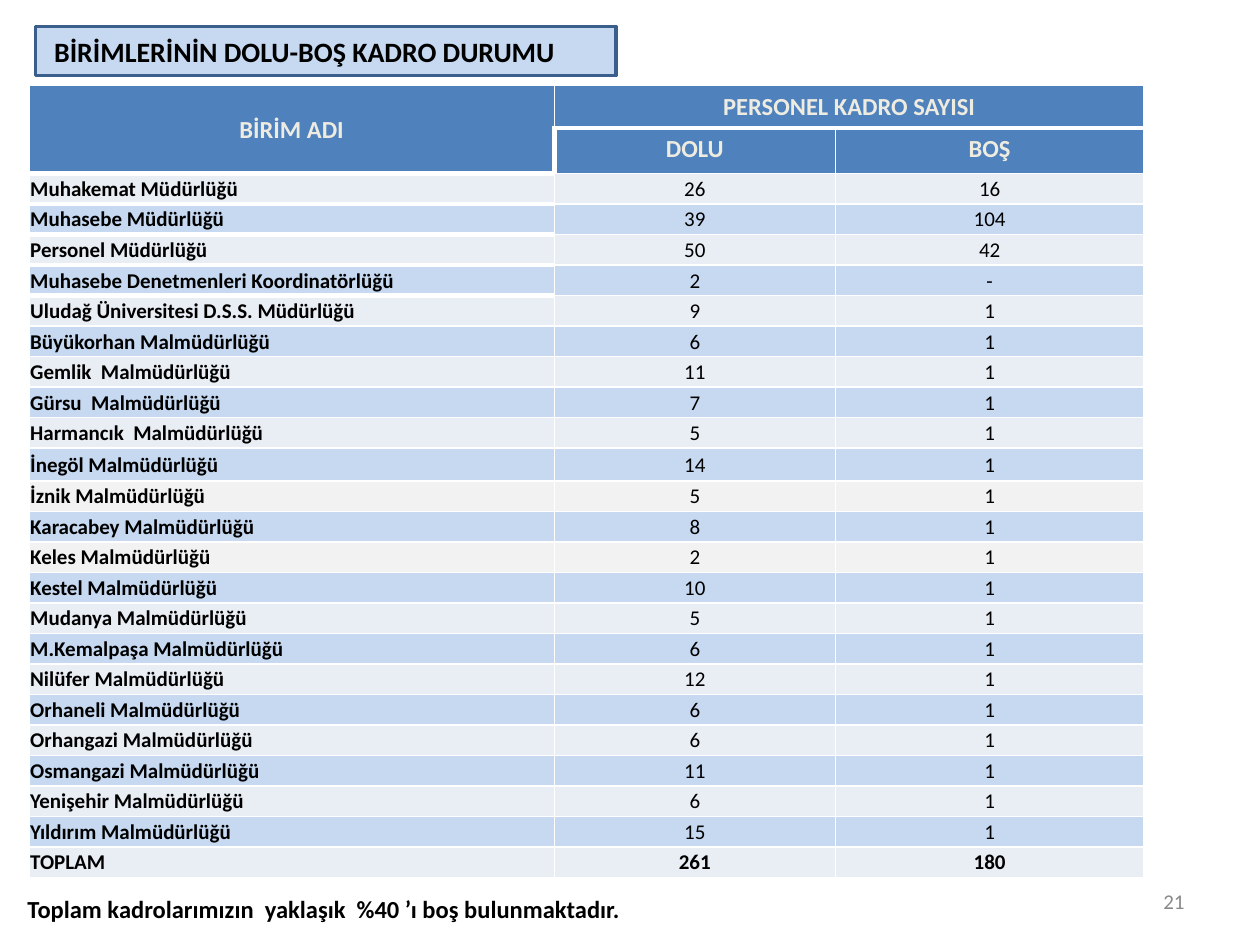
from dataclasses import dataclass

from lxml import etree
from pptx import Presentation, util as u
from pptx.dml.color import RGBColor
from pptx.enum import text
from pptx.oxml import ns

LEFT, CENTER, RIGHT = text.PP_ALIGN.LEFT, text.PP_ALIGN.CENTER, text.PP_ALIGN.RIGHT
TOP, MIDDLE = text.MSO_ANCHOR.TOP, text.MSO_ANCHOR.MIDDLE


@dataclass(frozen=True)
class Theme:
    font: str = "Calibri"
    ink: str = "000000"
    muted: str = "898989"
    white: str = "FFFFFF"
    cream: str = "EEECE1"
    header: str = "4F81BD"
    band: str = "C6D9F1"
    light: str = "E9EDF4"
    grey: str = "F2F2F2"
    outline: str = "3A5F8C"
    title_size: int = 16
    head_size: int = 14
    body_size: int = 12
    thin: int = 1
    thick: int = 3


class StaffPage:
    COLUMNS, ROWS = 100, 75

    def __init__(self, deck, theme):
        self.theme = theme
        self.page = deck.slides.add_slide(deck.slide_layouts[5])
        self.column = deck.slide_width / self.COLUMNS
        self.row = deck.slide_height / self.ROWS

    def area(self, left, top, width, height):
        return [u.Emu(round(count * unit)) for count, unit in
                zip((left, top, width, height), (self.column, self.row) * 2)]

    def add_words(self, para, words, size, color, bold=False, align=LEFT):
        para.alignment = align
        span = para.add_run()
        span.text = words
        span.font.name = self.theme.font
        span.font.size = u.Pt(size)
        span.font.bold = bold
        span.font.color.rgb = RGBColor.from_string(color)

    def title(self, words, *place):
        box = self.page.shapes.title
        box.left, box.top, box.width, box.height = self.area(*place)
        outline = etree.Element(ns.qn("a:prstGeom"), prst="roundRect")
        etree.SubElement(outline, ns.qn("a:avLst"))
        box.element.spPr.insert(1, outline)
        box.fill.solid()
        box.fill.fore_color.rgb = RGBColor.from_string(self.theme.band)
        box.line.color.rgb = RGBColor.from_string(self.theme.outline)
        box.line.width = u.Pt(2)
        frame = box.text_frame
        frame.auto_size = text.MSO_AUTO_SIZE.NONE
        frame.vertical_anchor = MIDDLE
        frame.margin_left = u.Inches(0.15)
        self.add_words(frame.paragraphs[0], words, self.theme.title_size, self.theme.ink, True)

    def note(self, words, *place, anchor=TOP, **style):
        frame = self.page.shapes.add_textbox(*self.area(*place)).text_frame
        frame.word_wrap = True
        frame.vertical_anchor = anchor
        self.add_words(frame.paragraphs[0], words, **style)

    def table(self, place, widths, heights):
        grid = self.page.shapes.add_table(len(heights), len(widths), *self.area(*place)).table
        grid.first_row = grid.horz_banding = False
        for column, width in zip(grid.columns, widths):
            column.width = u.Emu(round(width * self.column))
        for row, height in zip(grid.rows, heights):
            row.height = u.Emu(round(height * self.row))
        return grid

    def cell(self, cell, words, fill, margins, thick="", anchor=MIDDLE, **style):
        cell.fill.solid()
        cell.fill.fore_color.rgb = RGBColor.from_string(fill)
        cell.vertical_anchor = anchor
        cell.margin_left, cell.margin_top, cell.margin_right, cell.margin_bottom = map(u.Inches, margins)
        self.borders(cell, thick)
        if words:
            self.add_words(cell.text_frame.paragraphs[0], words, **style)

    def borders(self, cell, thick):
        properties = cell._tc.get_or_add_tcPr()
        for index, side in enumerate("LRTB"):
            points = self.theme.thick if side in thick else self.theme.thin
            line = etree.Element(ns.qn(f"a:ln{side}"), w=str(u.Pt(points)))
            fill = etree.SubElement(line, ns.qn("a:solidFill"))
            etree.SubElement(fill, ns.qn("a:srgbClr"), val=self.theme.white)
            properties.insert(index, line)


UNITS = [
    ("Muhakemat Müdürlüğü", "26", "16"),
    ("Muhasebe Müdürlüğü", "39", "104"),
    ("Personel Müdürlüğü", "50", "42"),
    ("Muhasebe Denetmenleri Koordinatörlüğü", "2", "-"),
    ("Uludağ Üniversitesi D.S.S. Müdürlüğü", "9", "1"),
    ("Büyükorhan Malmüdürlüğü", "6", "1"),
    ("Gemlik  Malmüdürlüğü", "11", "1"),
    ("Gürsu  Malmüdürlüğü", "7", "1"),
    ("Harmancık  Malmüdürlüğü", "5", "1"),
    ("İnegöl Malmüdürlüğü", "14", "1"),
    ("İznik Malmüdürlüğü", "5", "1"),
    ("Karacabey Malmüdürlüğü", "8", "1"),
    ("Keles Malmüdürlüğü", "2", "1"),
    ("Kestel Malmüdürlüğü", "10", "1"),
    ("Mudanya Malmüdürlüğü", "5", "1"),
    ("M.Kemalpaşa Malmüdürlüğü", "6", "1"),
    ("Nilüfer Malmüdürlüğü", "12", "1"),
    ("Orhaneli Malmüdürlüğü", "6", "1"),
    ("Orhangazi Malmüdürlüğü", "6", "1"),
    ("Osmangazi Malmüdürlüğü", "11", "1"),
    ("Yenişehir Malmüdürlüğü", "6", "1"),
    ("Yıldırım Malmüdürlüğü", "15", "1"),
    ("TOPLAM", "261", "180"),
]
HEADER = [
    [("BİRİM ADI", "B", MIDDLE), ("PERSONEL KADRO SAYISI", "B", TOP), ("", "B", TOP)],
    [("", "BR", MIDDLE), ("DOLU", "LT", TOP), ("BOŞ", "T", TOP)],
]
GREY_UNITS = ("İznik Malmüdürlüğü", "Keles Malmüdürlüğü")
TALL_UNIT = "İnegöl Malmüdürlüğü"


def staff_table(page, theme):
    table_height, header_heights, tall = 62.8, [3.3, 3.6], 2.6
    regular = (table_height - sum(header_heights) - tall) / (len(UNITS) - 1)
    heights = header_heights + [tall if unit[0] == TALL_UNIT else regular for unit in UNITS]
    grid = page.table((2.3, 6.8, 88.6, table_height), (41.7, 22.3, 24.5), heights)

    grid.cell(0, 0).merge(grid.cell(1, 0))
    grid.cell(0, 1).merge(grid.cell(0, 2))
    for row, labels in enumerate(HEADER):
        for column, (words, thick, anchor) in enumerate(labels):
            page.cell(grid.cell(row, column), words, theme.header, (0.1, 0.05, 0.1, 0.05), thick, anchor,
                      size=theme.head_size, color=theme.cream, bold=True, align=CENTER)

    for index, unit in enumerate(UNITS):
        fill = theme.band if index % 2 else theme.grey if unit[0] in GREY_UNITS else theme.light
        name_edges = "TB" if index < 4 else "T" if index == 4 else ""
        for column, words in enumerate(unit):
            page.cell(grid.cell(index + len(HEADER), column), words, fill, (0.01, 0.01, 0.01, 0),
                      "" if column else name_edges, size=theme.body_size, color=theme.ink,
                      bold=column == 0 or unit is UNITS[-1], align=CENTER if column else LEFT)


def main():
    deck = Presentation()
    deck.slide_width, deck.slide_height = u.Inches(10), u.Inches(7.5)
    theme = Theme()
    page = StaffPage(deck, theme)
    page.title("BİRİMLERİNİN DOLU-BOŞ KADRO DURUMU", 2.8, 2.1, 46.1, 3.9)
    staff_table(page, theme)
    page.note("Toplam kadrolarımızın  yaklaşık  %40 ’ı boş bulunmaktadır.", 1.2, 70.5, 88.6, 3.4,
              size=theme.head_size, color=theme.ink, bold=True)
    page.note("21", 71.7, 69.5, 23.3, 4, anchor=MIDDLE,
              size=theme.body_size, color=theme.muted, align=RIGHT)
    deck.save("out.pptx")


if __name__ == "__main__":
    main()
